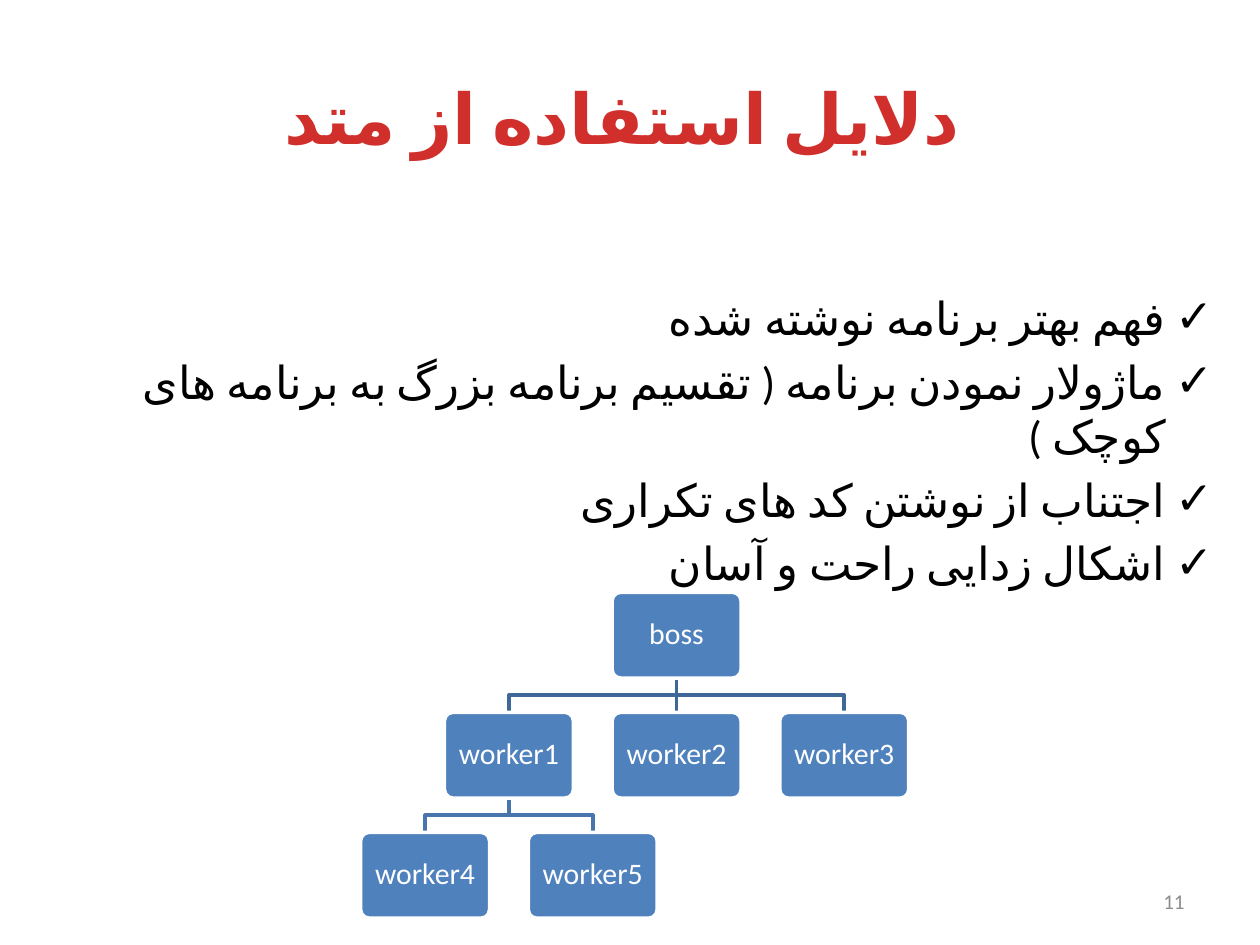
from lxml import etree
from pptx import Presentation
from pptx.dml.color import RGBColor
from pptx.enum.shapes import MSO_SHAPE
from pptx.enum.text import MSO_ANCHOR, PP_ALIGN
from pptx.oxml.ns import qn
from pptx.util import Cm, Pt

ROUNDED = MSO_SHAPE.ROUNDED_RECTANGLE
TOP, MIDDLE = MSO_ANCHOR.TOP, MSO_ANCHOR.MIDDLE
CENTER, RIGHT = PP_ALIGN.CENTER, PP_ALIGN.RIGHT

FONT = "Calibri"
WHITE, BLACK, GREY = "FFFFFF", "000000", "8C8C8C"
RED, BLUE = "D02F2C", "4F81BD"
LINK_COLORS = ["3F6797", "4875AC"]  # by level of the parent

REASONS = [
    "فهم بهتر برنامه نوشته شده",
    "ماژولار نمودن برنامه ( تقسیم برنامه بزرگ به برنامه های کوچک )",
    "اجتناب از نوشتن کد های تکراری",
    "اشکال زدایی راحت و آسان",
]

# Organisation tree in cm: columns are counted from the boss
BOSS_X, TREE_TOP = 13.64, 11.94
NODE_W, NODE_H = 2.6, 1.73
COLUMN_STEP, ROW_STEP = 3.38, 2.42
NODES = {  # name: (column, level, parent)
    "boss": (0, 0, None),
    "worker1": (-1, 1, "boss"),
    "worker2": (0, 1, "boss"),
    "worker3": (1, 1, "boss"),
    "worker4": (-1.5, 2, "worker1"),
    "worker5": (-0.5, 2, "worker1"),
}


def rgb(hex_color):
    return RGBColor.from_string(hex_color)


def write(frame, lines, size, color, align=CENTER, anchor=MIDDLE, bold=False,
          before=0, spacing=1.0, bullet=None, language="en-US"):
    """Fill a text frame, one paragraph per line."""
    frame.word_wrap = True
    frame.vertical_anchor = anchor
    for number, line in enumerate(lines):
        paragraph = frame.add_paragraph() if number else frame.paragraphs[0]
        paragraph.alignment = align
        paragraph.space_before = Pt(before)
        paragraph.line_spacing = spacing
        run = paragraph.add_run()
        run.text = line
        run.font.name = FONT
        run.font.size = Pt(size)
        run.font.bold = bold
        run.font.color.rgb = rgb(color)
        # Persian letters take the complex-script font
        run_format = run._r.get_or_add_rPr()
        run_format.set("lang", language)
        etree.SubElement(run_format, qn("a:cs")).set("typeface", FONT)
        if bullet:
            add_rtl_bullet(paragraph, bullet)


def add_rtl_bullet(paragraph, mark):
    properties = paragraph._p.get_or_add_pPr()
    indent = Cm(0.95)
    properties.set("marL", str(indent))
    properties.set("indent", str(-indent))
    properties.set("rtl", "1")
    etree.SubElement(properties, qn("a:buFont")).set("typeface", FONT)
    etree.SubElement(properties, qn("a:buChar")).set("char", mark)


def add_text(slide, left, top, width, height, lines, **text_format):
    box = slide.shapes.add_textbox(Cm(left), Cm(top), Cm(width), Cm(height))
    write(box.text_frame, lines, **text_format)


def node_place(name):
    """Centre x and top y of a node."""
    column, level, _ = NODES[name]
    return BOSS_X + column * COLUMN_STEP, TREE_TOP + level * ROW_STEP


def add_node(slide, name):
    x, y = node_place(name)
    node = slide.shapes.add_shape(
        ROUNDED, Cm(x - NODE_W / 2), Cm(y), Cm(NODE_W), Cm(NODE_H))
    node.adjustments[0] = 0.1
    node.shadow.inherit = False
    node.fill.solid()
    node.fill.fore_color.rgb = rgb(BLUE)
    node.line.color.rgb = rgb(WHITE)
    node.line.width = Pt(2)
    frame = node.text_frame
    frame.margin_left = frame.margin_right = Cm(0.15)
    frame.margin_top = frame.margin_bottom = Cm(0.18)
    write(frame, [name], size=17, color=WHITE, spacing=0.9)
    frame.word_wrap = False


def add_link(slide, parent, child):
    """Line from the parent's foot, bent halfway, to the child's top."""
    start_x, parent_top = node_place(parent)
    end_x, end_y = node_place(child)
    start_y = parent_top + NODE_H
    bend_y = (start_y + end_y) / 2
    corners = [(start_x, bend_y), (end_x, bend_y), (end_x, end_y)]
    outline = slide.shapes.build_freeform(Cm(start_x), Cm(start_y))
    outline.add_line_segments(
        [(Cm(x), Cm(y)) for x, y in corners], close=False)
    link = outline.convert_to_shape()
    link.shadow.inherit = False
    link.fill.background()
    link.line.color.rgb = rgb(LINK_COLORS[NODES[parent][1]])
    link.line.width = Pt(2)


def add_tree(slide):
    # Links lie under the nodes
    for name, (_, _, parent) in NODES.items():
        if parent:
            add_link(slide, parent, name)
    for name in NODES:
        add_node(slide, name)


def main():
    deck = Presentation()
    deck.slide_width, deck.slide_height = Cm(25.4), Cm(19.05)
    slide = deck.slides.add_slide(deck.slide_layouts[6])

    # Title
    add_text(slide, 1.27, 0.76, 22.86, 3.18, ["دلایل استفاده از متد "],
             size=40, color=RED, bold=True, language="fa-IR")
    # Reasons
    add_text(slide, 2.11, 5.72, 22.6, 6, REASONS, size=26, color=BLACK,
             align=RIGHT, anchor=TOP, before=5.2, bullet="✓",
             language="fa-IR")
    # Organisation tree
    add_tree(slide)
    # Slide number
    add_text(slide, 18.2, 17.66, 5.93, 1.01, ["11"], size=12, color=GREY,
             align=RIGHT)

    deck.save("out.pptx")


if __name__ == "__main__":
    main()
